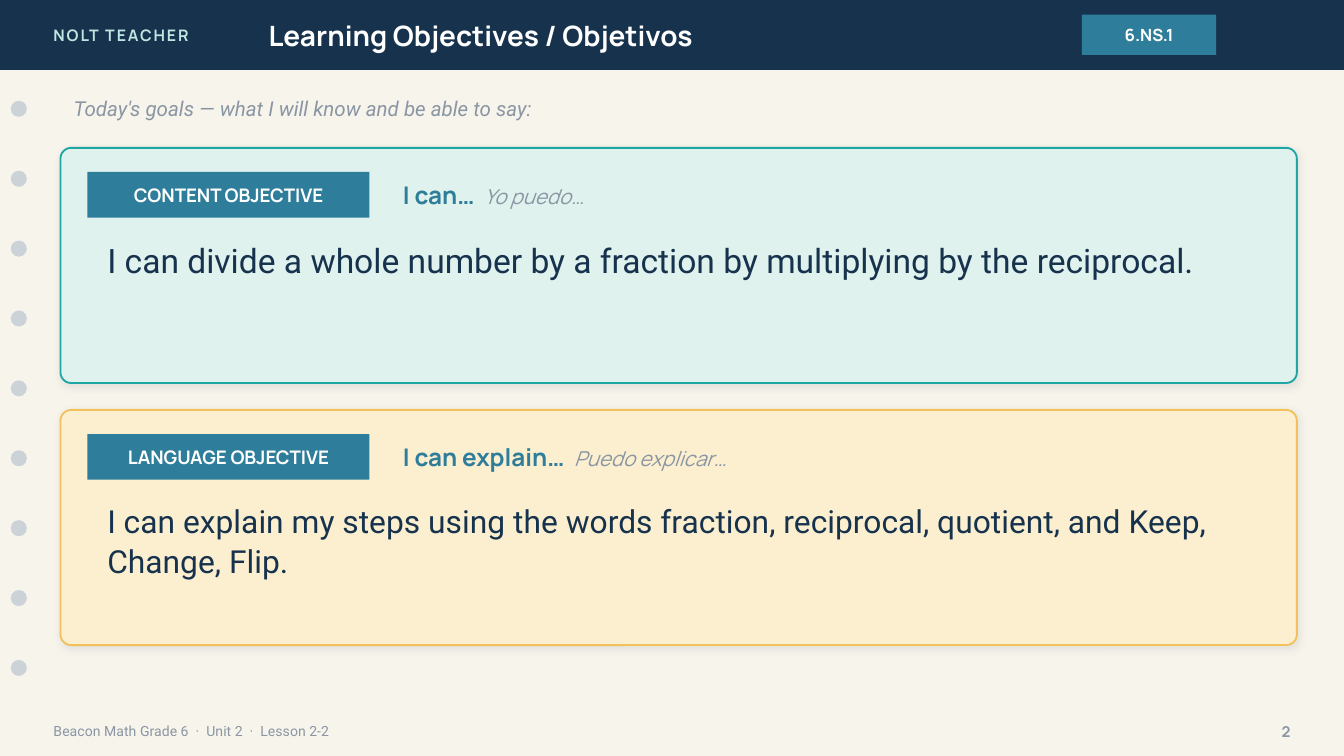
from dataclasses import dataclass

from lxml import etree
from pptx import Presentation
from pptx.dml.color import RGBColor
from pptx.enum import shapes, text
from pptx.oxml import ns
from pptx.util import Inches, Pt

SHAPE = shapes.MSO_SHAPE
ALIGN = text.PP_ALIGN
ANCHOR = text.MSO_ANCHOR
SLIDE_WIDTH = 10
SLIDE_HEIGHT = SLIDE_WIDTH * 9 / 16


@dataclass(frozen=True)
class Theme:
    """Colours, fonts and type sizes of the lesson deck."""
    paper: str = "F7F4EC"
    navy: str = "17324D"
    teal: str = "2E7D9A"
    mint: str = "BFE6E2"
    white: str = "FFFFFF"
    muted: str = "8A96A3"
    hole: str = "CBD3D9"
    shadow: str = "1C2E42"
    content: tuple = ("DFF2EE", "1FA6A2")
    language: tuple = ("FBEFD0", "F2C15B")
    heading: str = "Manrope"
    body: str = "Roboto"
    brand_size: float = 8.5
    title_size: float = 15
    standard_size: float = 9
    label_size: float = 10
    starter_size: float = 13
    aside_size: float = 11
    content_size: float = 18
    language_size: float = 17
    footer_size: float = 7.5
    page_size: float = 8


THEME = Theme()


def rgb(value):
    """Turn a hex string into a colour."""
    return RGBColor.from_string(value)


def write(paragraph, words, size, colour, font=THEME.heading, bold=False, italic=False):
    """Add one styled run to a paragraph and return it."""
    run = paragraph.add_run()
    run.text = words
    run.font.size = Pt(size)
    run.font.name = font
    run.font.bold = bold
    run.font.italic = italic
    run.font.color.rgb = rgb(colour)
    return run


def add_text(slide, left, top, width, height, anchor=ANCHOR.MIDDLE, align=ALIGN.LEFT):
    """Add a wrapping text box and return its first paragraph."""
    frame = slide.shapes.add_textbox(
        Inches(left), Inches(top), Inches(width), Inches(height)).text_frame
    frame.word_wrap = True
    frame.vertical_anchor = anchor
    paragraph = frame.paragraphs[0]
    paragraph.alignment = align
    return paragraph


def add_block(slide, kind, left, top, width, height, fill, line=None):
    """Add a flat filled shape with an optional outline."""
    block = slide.shapes.add_shape(
        kind, Inches(left), Inches(top), Inches(width), Inches(height))
    block.shadow.inherit = False
    block.fill.solid()
    block.fill.fore_color.rgb = rgb(fill)
    if line:
        block.line.color.rgb = rgb(line)
        block.line.width = Pt(1)
    else:
        block.line.fill.background()
    return block


def add_tag(slide, left, top, width, height, words, size):
    """Add a teal tag with a centred bold label."""
    tag = add_block(slide, SHAPE.RECTANGLE, left, top, width, height, THEME.teal)
    tag.text_frame.vertical_anchor = ANCHOR.MIDDLE
    label = tag.text_frame.paragraphs[0]
    label.alignment = ALIGN.CENTER
    write(label, words, size, THEME.white, bold=True)


def soften(card):
    """Give a card a faint shadow that falls downwards."""
    effects = card._element.spPr.find(ns.qn("a:effectLst"))
    shadow = etree.SubElement(
        effects, ns.qn("a:outerShdw"), blurRad=str(Pt(4)), dist=str(Pt(1)),
        dir="5400000", algn="bl", rotWithShape="0")
    colour = etree.SubElement(shadow, ns.qn("a:srgbClr"), val=THEME.shadow)
    etree.SubElement(colour, ns.qn("a:alpha"), val="10000")


def add_header(slide, left, top, width, height):
    """Draw the top band with brand, title and standard tag."""
    add_block(slide, SHAPE.RECTANGLE, left, top, width, height, THEME.navy)
    brand = write(add_text(slide, left + 0.3, top, 2.4, height),
                  "NOLT TEACHER", THEME.brand_size, THEME.mint, bold=True)
    brand.font._element.set("spc", "100")
    write(add_text(slide, left + 1.9, top, 5.6, height),
          "Learning Objectives / Objetivos", THEME.title_size, THEME.white, bold=True)
    add_tag(slide, left + 8.05, top + 0.11, 1, 0.3, "6.NS.1", THEME.standard_size)


def add_binder_holes(slide, left, top, size=0.12, pitch=0.52, count=9):
    """Draw the column of notebook holes."""
    for index in range(count):
        add_block(slide, SHAPE.OVAL, left, top + index * pitch, size, size, THEME.hole)


def add_footer(slide, left, top, width, height):
    """Write the lesson reference and the page number."""
    write(add_text(slide, left, top, 7, height),
          "Beacon Math Grade 6  ·  Unit 2  ·  Lesson 2-2",
          THEME.footer_size, THEME.muted, THEME.body)
    write(add_text(slide, left + width - 0.5, top, 0.5, height, align=ALIGN.RIGHT),
          "2", THEME.page_size, THEME.muted, bold=True)


def add_objective(slide, left, top, width, height, colours, label, starter,
                  translation, goal, goal_size):
    """Draw one objective card with its tag, sentence starter and goal."""
    fill, line = colours
    card = add_block(slide, SHAPE.ROUNDED_RECTANGLE, left, top, width, height, fill, line)
    card.adjustments[0] = 0.08 / height
    soften(card)
    add_tag(slide, left + 0.2, top + 0.18, 2.1, 0.34, label, THEME.label_size)
    opening = add_text(slide, left + 2.45, top + 0.18, width - 2.6, 0.34)
    write(opening, starter, THEME.starter_size, THEME.teal, bold=True)
    write(opening, translation, THEME.aside_size, THEME.muted, italic=True)
    statement = add_text(slide, left + 0.25, top + 0.62, width - 0.5, 1, ANCHOR.TOP)
    statement.line_spacing = 1.05
    write(statement, goal, goal_size, THEME.navy, THEME.body)


def add_objectives(slide, left, top, width, height):
    """Write the lead-in and stack the objective cards below it."""
    write(add_text(slide, left, top, width, 0.3),
          "Today's goals — what I will know and be able to say:",
          THEME.aside_size, THEME.muted, THEME.body, italic=True)
    objectives = [
        (THEME.content, "CONTENT OBJECTIVE", "I can…  ", "Yo puedo…",
         "I can divide a whole number by a fraction by multiplying by the reciprocal.",
         THEME.content_size),
        (THEME.language, "LANGUAGE OBJECTIVE", "I can explain…  ", "Puedo explicar…",
         "I can explain my steps using the words fraction, reciprocal, quotient, "
         "and Keep, Change, Flip.", THEME.language_size),
    ]
    lead, gap = 0.44, 0.2
    card_height = (height - lead - gap) / len(objectives)
    for index, objective in enumerate(objectives):
        card_top = top + lead + index * (card_height + gap)
        add_objective(slide, left, card_top, width, card_height, *objective)


def main():
    """Build the objectives slide and save it."""
    deck = Presentation()
    deck.slide_width, deck.slide_height = Inches(SLIDE_WIDTH), Inches(SLIDE_HEIGHT)
    slide = deck.slides.add_slide(deck.slide_layouts[6])
    slide.background.fill.solid()
    slide.background.fill.fore_color.rgb = rgb(THEME.paper)
    add_header(slide, 0, 0, SLIDE_WIDTH, 0.52)
    add_binder_holes(slide, 0.08, 0.75)
    add_footer(slide, 0.3, 5.3, 9.4, 0.28)
    add_objectives(slide, 0.45, 0.66, 9.2, 4.14)
    deck.save("out.pptx")


if __name__ == "__main__":
    main()
